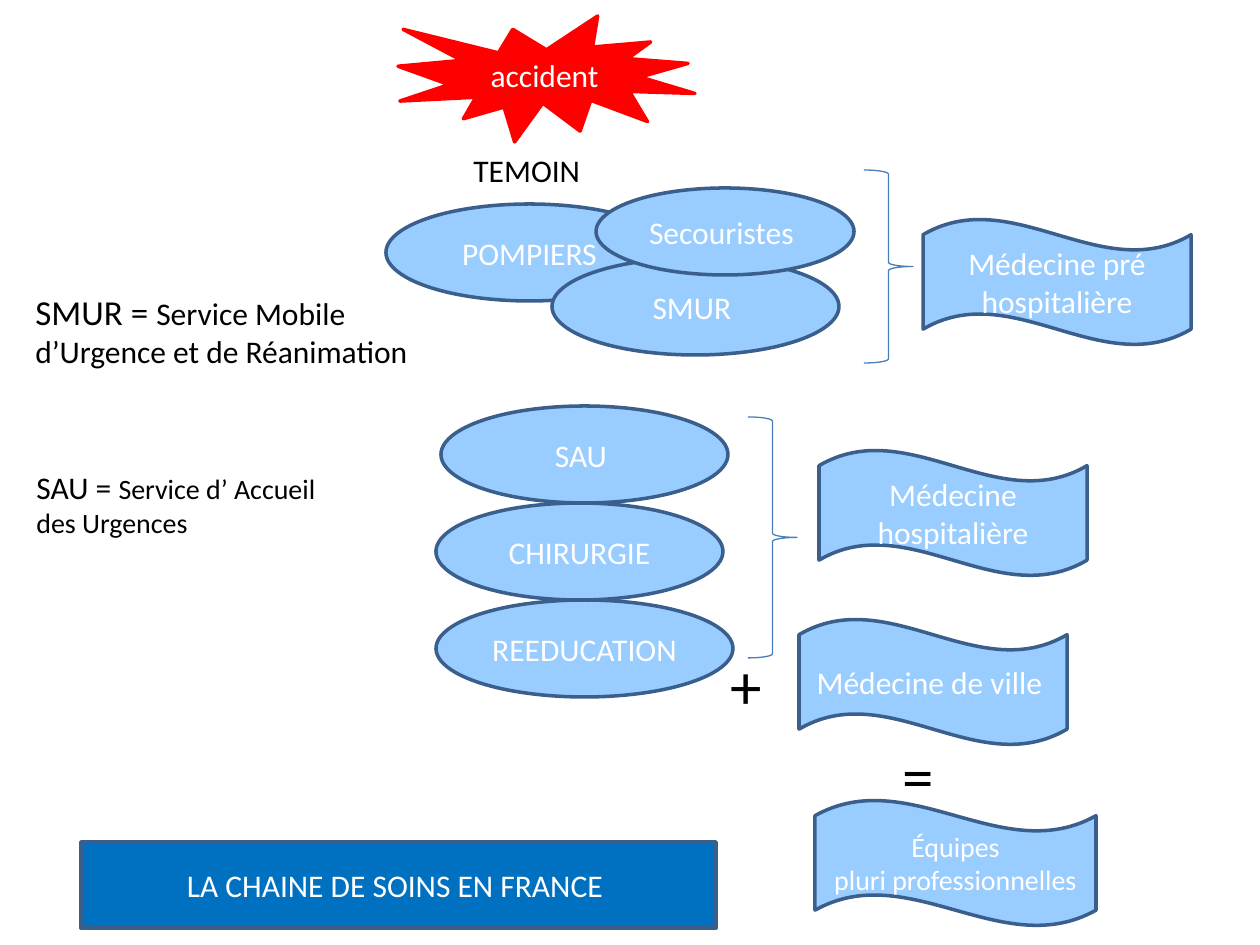
from dataclasses import dataclass

from pptx import Presentation
from pptx.dml.color import RGBColor
from pptx.enum.shapes import MSO_SHAPE
from pptx.enum.text import MSO_ANCHOR, PP_ALIGN
from pptx.shapes.autoshape import Shape
from pptx.slide import Slide
from pptx.text.text import TextFrame
from pptx.util import Pt

SCALE = 914400 / 126
WHITE, BLACK, RED = "FFFFFF", "000000", "FF0000"
SKY, BLUE, EDGE, BRACE = "99CCFF", "0070C0", "3A5F8C", "4A7EBB"
OVAL, WAVE = MSO_SHAPE.OVAL, MSO_SHAPE.WAVE


@dataclass
class Box:
    x: int
    y: int
    w: int
    h: int


@dataclass
class Node:
    kind: MSO_SHAPE
    box: Box
    text: str
    size: int = 18
    fill: str = SKY
    edge: str = EDGE


@dataclass
class Note:
    """Free text; the lead opens the first line at its own size."""
    box: Box
    text: str
    size: int
    lead: str = ""
    big: int = 0
    wrap: bool = False


def px(n: int) -> int:
    return round(n * SCALE)


def place(box: Box) -> tuple[int, ...]:
    return tuple(px(n) for n in (box.x, box.y, box.w, box.h))


def color(code: str) -> RGBColor:
    return RGBColor.from_string(code)


def write(frame: TextFrame, text: str, *, size: int, tint: str,
          align: PP_ALIGN = PP_ALIGN.LEFT, anchor: MSO_ANCHOR = MSO_ANCHOR.TOP,
          wrap: bool = True, lead: str = "", big: int = 0) -> None:
    frame.word_wrap = wrap
    frame.vertical_anchor = anchor
    for i, line in enumerate(text.split("\n")):
        para = frame.add_paragraph() if i else frame.paragraphs[0]
        para.alignment = align
        spans = [(line, size)]
        if lead and i == 0:
            spans.insert(0, (lead, big))
        for words, pts in spans:
            run = para.add_run()
            run.text = words
            run.font.name = "Calibri"
            run.font.size = Pt(pts)
            run.font.color.rgb = color(tint)


def add_form(slide: Slide, kind: MSO_SHAPE, box: Box, edge: str, width: float) -> Shape:
    shape = slide.shapes.add_shape(kind, *place(box))
    shape.shadow.inherit = False
    shape.line.color.rgb = color(edge)
    shape.line.width = Pt(width)
    return shape


def add_node(slide: Slide, node: Node) -> None:
    shape = add_form(slide, node.kind, node.box, node.edge, 2)
    shape.fill.solid()
    shape.fill.fore_color.rgb = color(node.fill)
    write(shape.text_frame, node.text, size=node.size, tint=WHITE,
          align=PP_ALIGN.CENTER, anchor=MSO_ANCHOR.MIDDLE)


def add_brace(slide: Slide, box: Box) -> None:
    add_form(slide, MSO_SHAPE.RIGHT_BRACE, box, BRACE, 0.75).fill.background()


def add_note(slide: Slide, note: Note) -> None:
    frame = slide.shapes.add_textbox(*place(note.box)).text_frame
    write(frame, note.text, size=note.size, tint=BLACK, wrap=note.wrap,
          lead=note.lead, big=note.big)


NODES = [
    Node(MSO_SHAPE.RECTANGLE, Box(81, 842, 635, 86),
         "LA CHAINE DE SOINS EN FRANCE ", fill=BLUE),
    Node(MSO_SHAPE.EXPLOSION1, Box(398, 16, 297, 126), "accident", fill=RED, edge=RED),
    Node(OVAL, Box(386, 204, 287, 97), "POMPIERS"),
    Node(OVAL, Box(552, 258, 287, 97), "SMUR "),
    Node(OVAL, Box(596, 188, 258, 87), "Secouristes "),
    Node(OVAL, Box(441, 406, 287, 97), "SAU "),
    Node(OVAL, Box(436, 503, 287, 97), "CHIRURGIE"),
    Node(OVAL, Box(436, 600, 297, 97), "REEDUCATION"),
    Node(WAVE, Box(923, 219, 268, 126), "Médecine pré hospitalière"),
    Node(WAVE, Box(819, 450, 268, 126), "Médecine hospitalière"),
    Node(WAVE, Box(799, 619, 268, 126), "Médecine de ville "),
    Node(WAVE, Box(815, 800, 281, 126), "Équipes\npluri professionnelles", 16),
]
BRACES = [Box(864, 170, 49, 193), Box(748, 417, 49, 241)]
NOTES = [
    Note(Box(461, 145, 208, 50), "TEMOIN", 18, wrap=True),
    Note(Box(23, 284, 402, 93), "Service Mobile\nd’Urgence et de Réanimation", 18,
         lead="SMUR = ", big=20),
    Note(Box(24, 462, 310, 83), "Service d’ Accueil\ndes Urgences", 16,
         lead="SAU = ", big=18),
    Note(Box(718, 640, 71, 88), "+", 36),
    Note(Box(890, 730, 84, 88), "=", 36),
]


def main() -> None:
    deck = Presentation()
    deck.slide_width, deck.slide_height = px(1260), px(945)
    slide = deck.slides.add_slide(deck.slide_layouts[6])
    for node in NODES:
        add_node(slide, node)
    for box in BRACES:
        add_brace(slide, box)
    for note in NOTES:
        add_note(slide, note)
    deck.save("out.pptx")


if __name__ == "__main__":
    main()
